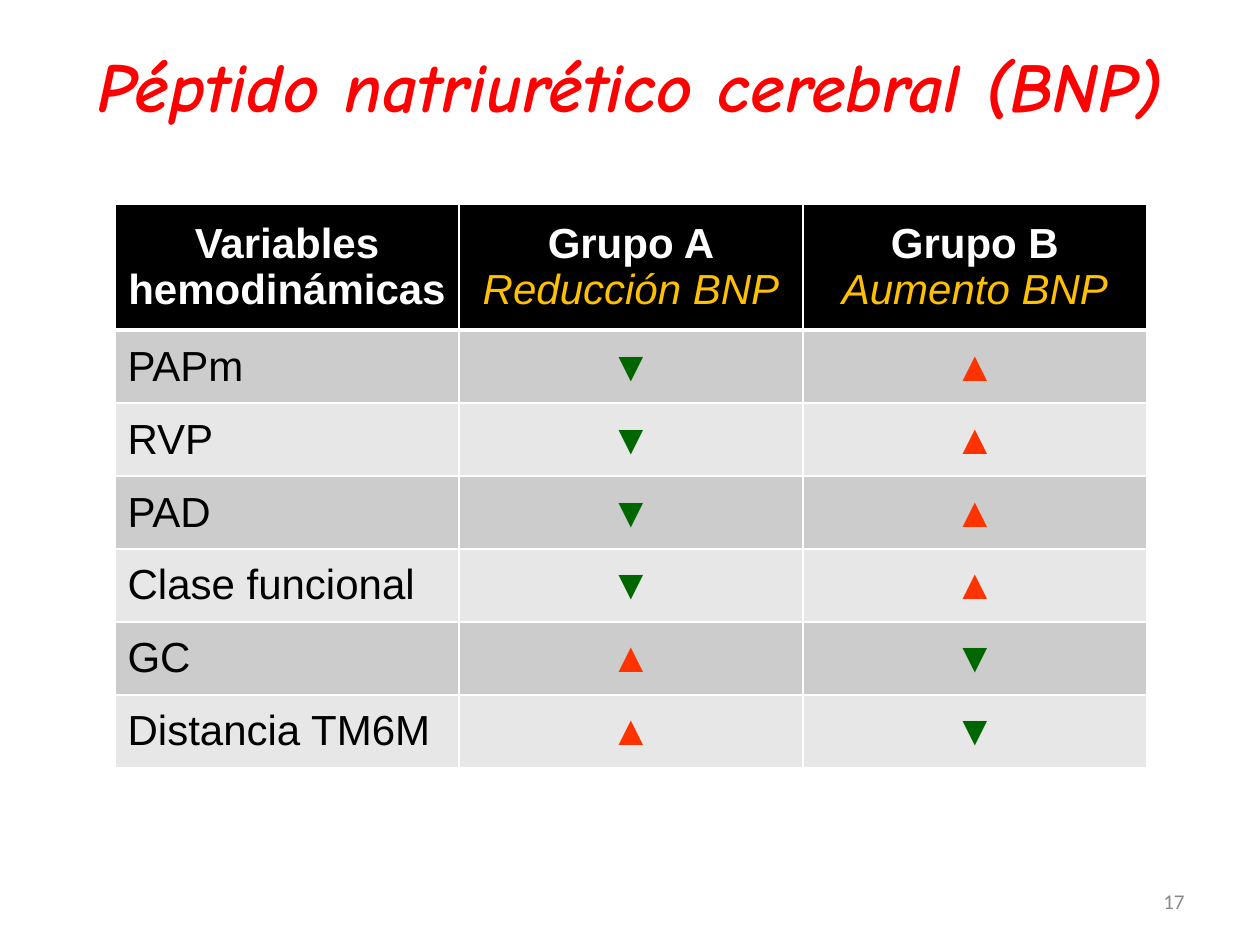
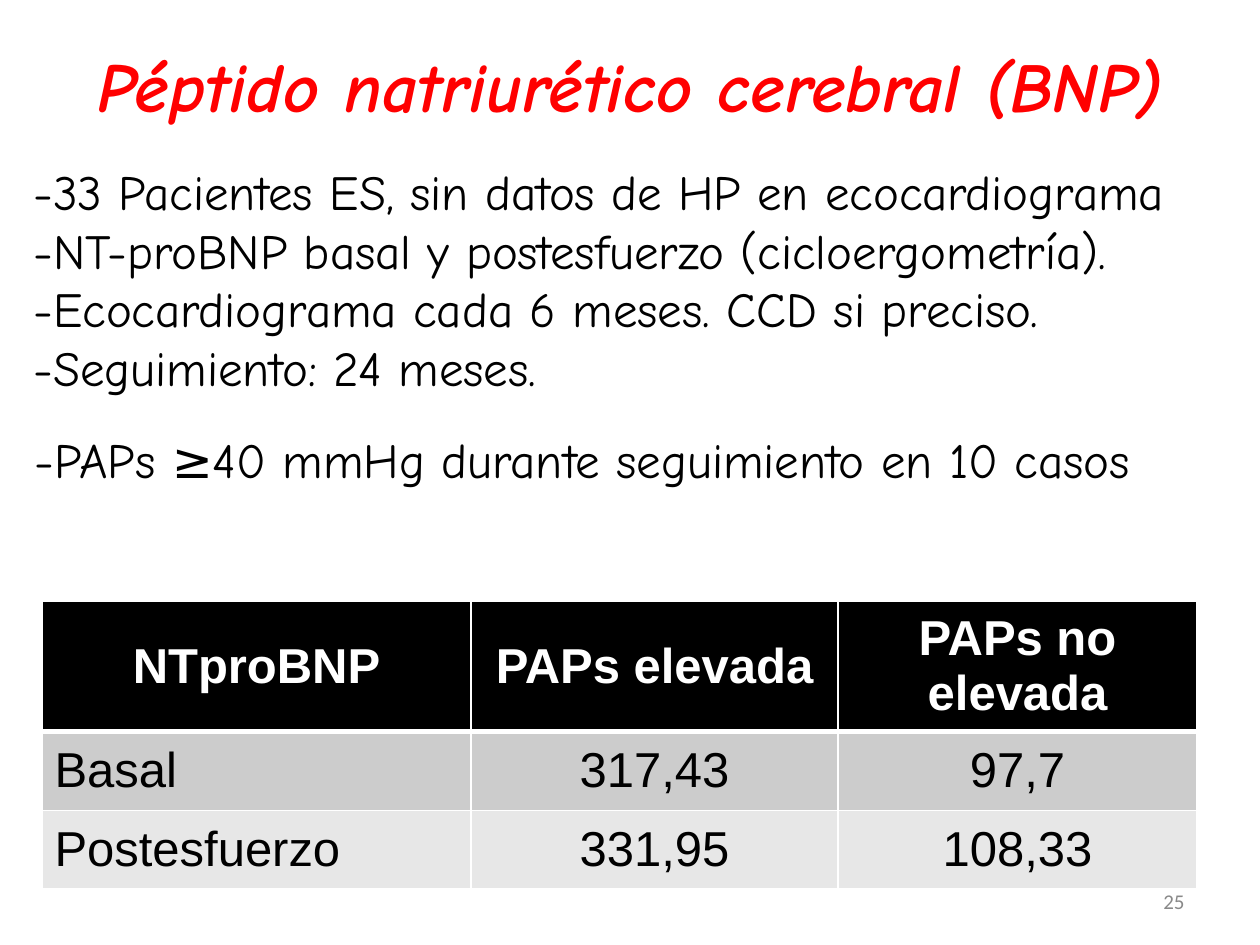
from lxml import etree
from pptx import Presentation
from pptx.dml.color import RGBColor
from pptx.enum.text import MSO_ANCHOR, PP_ALIGN
from pptx.oxml.ns import qn
from pptx.util import Emu, Pt

LEFT, CENTER, RIGHT = PP_ALIGN.LEFT, PP_ALIGN.CENTER, PP_ALIGN.RIGHT
TOP, MIDDLE = MSO_ANCHOR.TOP, MSO_ANCHOR.MIDDLE
BLANK_LAYOUT = 6
EMU_PER_PX = 914400 / 126
TITLE = "Péptido natriurético cerebral (BNP)"
UP, DOWN = "▲", "▼"


def px(length):
    """Turn pixels into EMU."""
    return Emu(round(length * EMU_PER_PX))


def color(value):
    """Turn a hex string into a colour."""
    return RGBColor.from_string(value)


class SlideWriter:
    """Holds the shared style and adds elements to the current slide."""

    title_font, table_font, number_font = "Comic Neue", "Arial", "Calibri"
    red, black, white, gray, amber = "FF0000", "000000", "FFFFFF", "898989", "FFC000"
    bands = ("CCCCCC", "E7E7E7")
    arrow_colors = {UP: "FF3300", DOWN: "006600"}

    def __init__(self, deck):
        """Keep the deck that receives the slides."""
        self.deck = deck
        self.page = None

    def new_page(self, number):
        """Start a slide with its number and title."""
        self.page = self.deck.slides.add_slide(self.deck.slide_layouts[BLANK_LAYOUT])
        self.text(903, 876, 294, 50, [str(number)], self.number_font, 12,
                  self.gray, RIGHT, MIDDLE)
        self.text(0, 36, 1260, 98, [TITLE], self.title_font, 40, self.red, CENTER,
                  bold=True, italic=True)

    def style(self, para, font, size, hue, align, bold=False, italic=False):
        """Set the alignment and font of a paragraph."""
        para.alignment = align
        para.font.name = font
        para.font.size = Pt(size)
        para.font.color.rgb = color(hue)
        para.font.bold = bold
        para.font.italic = italic

    def text(self, left, top, width, height, lines, font, size, hue,
             align=LEFT, anchor=TOP, bold=False, italic=False):
        """Add a wrapping text box with one paragraph per line."""
        box = self.page.shapes.add_textbox(px(left), px(top), px(width), px(height))
        frame = box.text_frame
        frame.word_wrap = True
        frame.vertical_anchor = anchor
        frame.text = "\n".join(lines)
        for para in frame.paragraphs:
            self.style(para, font, size, hue, align, bold, italic)

    def body(self, left, top, height, lines):
        """Add body text that runs to the right edge."""
        self.text(left, top, 1239, height, lines, self.title_font, 28, self.black)

    def borders(self, cell, top, bottom):
        """Draw white borders around a cell, with widths in points."""
        properties = cell._tc.get_or_add_tcPr()
        for side, width in (("L", 1), ("R", 1), ("T", top), ("B", bottom)):
            line = etree.SubElement(properties, qn(f"a:ln{side}"), w=str(Pt(width)))
            fill = etree.SubElement(line, qn("a:solidFill"))
            etree.SubElement(fill, qn("a:srgbClr"), val=self.white)

    def cell(self, cell, words, row, column, size):
        """Fill and style one table cell by its place in the grid."""
        header = row == 0
        self.borders(cell, 3 if row == 1 else 1, 3 if header else 1)
        cell.fill.solid()
        cell.fill.fore_color.rgb = color(self.black if header else self.bands[(row - 1) % 2])
        cell.vertical_anchor = MIDDLE
        cell.text = words
        align = CENTER if header or column else LEFT
        for index, para in enumerate(cell.text_frame.paragraphs):
            subtitle = index > 0
            if header:
                hue = self.amber if subtitle else self.white
            else:
                hue = self.arrow_colors.get(words, self.black)
            self.style(para, self.table_font, size, hue, align,
                       header and not subtitle, subtitle)

    def table(self, left, top, widths, heights, rows, size):
        """Add a table with a black header and gray bands."""
        table = self.page.shapes.add_table(
            len(rows), len(widths), px(left), px(top),
            px(sum(widths)), px(sum(heights))).table
        for column, width in zip(table.columns, widths):
            column.width = px(width)
        for line, height in zip(table.rows, heights):
            line.height = px(height)
        for row, entries in enumerate(rows):
            for column, words in enumerate(entries):
                self.cell(table.cell(row, column), words, row, column, size)


def add_groups_page(writer):
    """Compare the haemodynamic variables of both groups."""
    writer.new_page(17)
    falling = ["PAPm", "RVP", "PAD", "Clase funcional"]
    rising = ["GC", "Distancia TM6M"]
    rows = [("Variables hemodinámicas", "Grupo A\nReducción BNP", "Grupo B\nAumento BNP")]
    rows += [(name, DOWN, UP) for name in falling]
    rows += [(name, UP, DOWN) for name in rising]
    writer.table(115, 204, [344] * 3, [126] + [73] * 6, rows, 24)


def add_exercise_page(writer):
    """Show the study design and the NTproBNP values."""
    writer.new_page(25)
    writer.body(21, 155, 251, [
        "-33 Pacientes ES, sin datos de HP en ecocardiograma",
        "-NT-proBNP basal y postesfuerzo (cicloergometría).",
        "-Ecocardiograma cada 6 meses. CCD si preciso.",
        "-Seguimiento: 24 meses.",
    ])
    writer.body(22, 423, 72, ["-PAPs ≥40 mmHg durante seguimiento en 10 casos"])
    rows = [
        ("NTproBNP", "PAPs elevada", "PAPs no elevada"),
        ("Basal", "317,43", "97,7"),
        ("Postesfuerzo", "331,95", "108,33"),
    ]
    writer.table(42, 601, [429, 367, 359], [79] * 3, rows, 28)


def main():
    """Build the deck and save it."""
    deck = Presentation()
    deck.slide_width, deck.slide_height = px(1260), px(945)
    writer = SlideWriter(deck)
    add_groups_page(writer)
    add_exercise_page(writer)
    deck.save("out.pptx")


if __name__ == "__main__":
    main()
